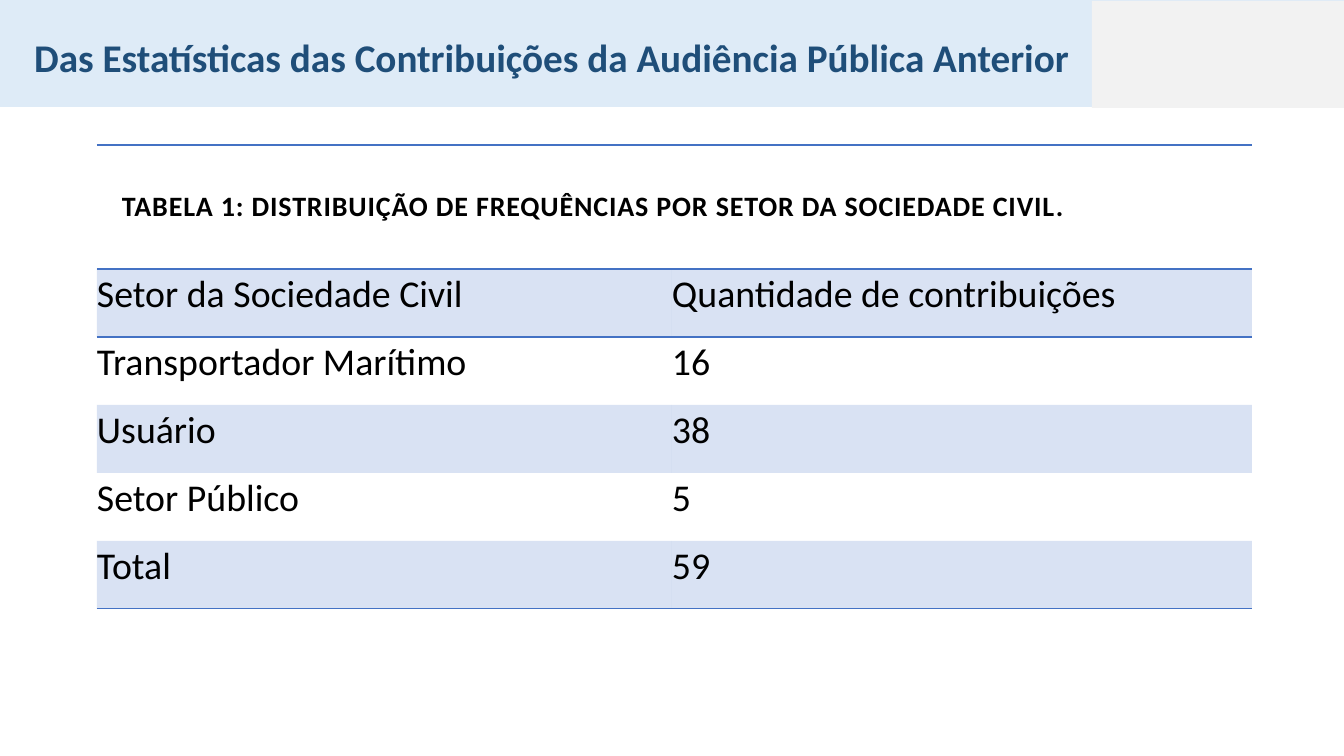
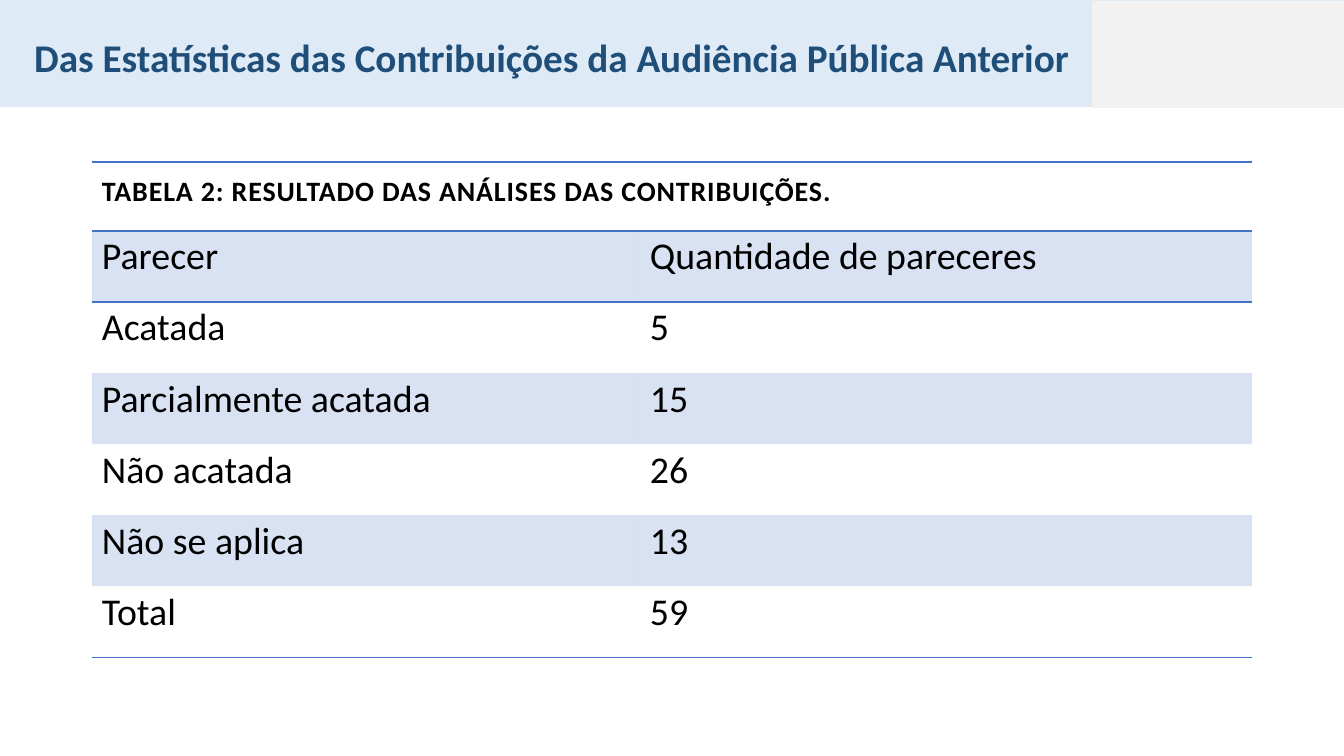
from dataclasses import dataclass

from lxml.etree import SubElement
from pptx import Presentation
from pptx.dml.color import RGBColor
from pptx.enum.shapes import MSO_SHAPE
from pptx.enum.text import MSO_ANCHOR, MSO_AUTO_SIZE, PP_ALIGN
from pptx.oxml import parse_xml
from pptx.oxml.ns import nsdecls, qn
from pptx.util import Emu, Pt

PX_PER_INCH = 100.8
FONT = "Calibri"
NO_TABLE_STYLE = "{2D5ABB26-0587-4C30-8999-92F81FD0307C}"
TITLE = "Das Estatísticas das Contribuições da Audiência Pública Anterior"
COLORS = {
    "band": "DEEBF7",
    "logo_area": "F2F2F2",
    "title": "1F4E79",
    "text": "000000",
    "accent": "4472C4",
}


@dataclass(frozen=True)
class Band:
    left: int
    top: int
    width: int
    height: int
    color: str


@dataclass(frozen=True)
class Insets:
    left: int
    top: int
    right: int
    bottom: int


@dataclass(frozen=True)
class StatTable:
    left: int
    top: int
    columns: tuple[int, int]
    caption: str
    caption_height: int
    caption_anchor: MSO_ANCHOR
    caption_insets: Insets
    row_height: int
    insets: Insets
    rows: tuple[tuple[str, str], ...]


BANDS = (
    Band(0, 0, 1344, 107, "band"),
    Band(1092, 1, 252, 107, "logo_area"),
)

STAT_TABLES = (
    StatTable(
        97, 145, (575, 580),
        "TABELA 1: DISTRIBUIÇÃO DE FREQUÊNCIAS POR SETOR DA SOCIEDADE CIVIL.",
        124, MSO_ANCHOR.MIDDLE, Insets(25, 25, 25, 25),
        68, Insets(0, 0, 0, 17),
        (
            ("Setor da Sociedade Civil", "Quantidade de contribuições"),
            ("Transportador Marítimo", "16"),
            ("Usuário", "38"),
            ("Setor Público", "5"),
            ("Total", "59"),
        ),
    ),
    StatTable(
        92, 162, (548, 612),
        "TABELA 2: RESULTADO DAS ANÁLISES DAS CONTRIBUIÇÕES.",
        69, MSO_ANCHOR.BOTTOM, Insets(10, 3, 0, 22),
        71, Insets(10, 3, 0, 22),
        (
            ("Parecer", "Quantidade de pareceres"),
            ("Acatada", "5"),
            ("Parcialmente acatada", "15"),
            ("Não acatada", "26"),
            ("Não se aplica", "13"),
            ("Total", "59"),
        ),
    ),
)


def px(length: int) -> Emu:
    return Emu(round(length * 914400 / PX_PER_INCH))


def rgb(name: str) -> RGBColor:
    return RGBColor.from_string(COLORS[name])


def add_run(paragraph, text: str, size: int, color: str, bold: bool, spacing: int = 0) -> None:
    run = paragraph.add_run()
    run.text = text
    run.font.name = FONT
    run.font.size = Pt(size)
    run.font.bold = bold
    run.font.color.rgb = rgb(color)
    if spacing:
        run._r.get_or_add_rPr().set("spc", str(spacing))


def move_bands_to_layout(slide, layout) -> None:
    for position, band in enumerate(BANDS, start=2):
        strip = slide.shapes.add_shape(
            MSO_SHAPE.RECTANGLE, px(band.left), px(band.top), px(band.width), px(band.height)
        )
        strip.shadow.inherit = False
        strip.fill.solid()
        strip.fill.fore_color.rgb = rgb(band.color)
        strip.line.fill.background()
        layout.shapes.element.insert(position, strip.element)


def add_title(slide) -> None:
    title = slide.shapes.title
    title.left, title.top, title.width, title.height = px(24), px(8), px(1159), px(103)
    frame = title.text_frame
    frame.word_wrap = True
    frame.auto_size = MSO_AUTO_SIZE.NONE
    frame.vertical_anchor = MSO_ANCHOR.MIDDLE
    paragraph = frame.paragraphs[0]
    paragraph.alignment = PP_ALIGN.LEFT
    paragraph.line_spacing = 0.9
    add_run(paragraph, TITLE, 28, "title", True)


def shade(cell) -> None:
    cell.fill.solid()
    cell.fill.fore_color.rgb = rgb("accent")
    tint = cell._tc.tcPr.find(qn("a:solidFill")).find(qn("a:srgbClr"))
    SubElement(tint, qn("a:alpha")).set("val", "20000")


def add_borders(cell, *edges: str) -> None:
    properties = cell._tc.get_or_add_tcPr()
    for position, edge in enumerate(edges):
        properties.insert(position, parse_xml(
            f'<a:{edge} {nsdecls("a")} w="12700"><a:solidFill>'
            f'<a:srgbClr val="{COLORS["accent"]}"/></a:solidFill></a:{edge}>'
        ))


def set_insets(cell, insets: Insets) -> None:
    cell.margin_left, cell.margin_top = px(insets.left), px(insets.top)
    cell.margin_right, cell.margin_bottom = px(insets.right), px(insets.bottom)


def add_stat_table(slide, stats: StatTable) -> None:
    row_count = len(stats.rows) + 1
    height = stats.caption_height + stats.row_height * len(stats.rows)
    frame = slide.shapes.add_table(
        row_count, len(stats.columns),
        px(stats.left), px(stats.top), px(sum(stats.columns)), px(height),
    )
    for style in frame.element.iter(qn("a:tableStyleId")):
        style.text = NO_TABLE_STYLE
    table = frame.table
    table.first_row = table.horz_banding = False
    for column, width in zip(table.columns, stats.columns):
        column.width = px(width)

    table.rows[0].height = px(stats.caption_height)
    caption = table.cell(0, 0)
    caption.merge(table.cell(0, len(stats.columns) - 1))
    caption.vertical_anchor = stats.caption_anchor
    set_insets(caption, stats.caption_insets)
    add_run(caption.text_frame.paragraphs[0], stats.caption, 20, "text", True, 60)
    for cell in table.rows[0].cells:
        cell.fill.background()
        add_borders(cell, "lnT", "lnB")

    for row_index, values in enumerate(stats.rows, start=1):
        table.rows[row_index].height = px(stats.row_height)
        for column_index, value in enumerate(values):
            cell = table.cell(row_index, column_index)
            cell.vertical_anchor = MSO_ANCHOR.MIDDLE
            set_insets(cell, stats.insets)
            add_run(cell.text_frame.paragraphs[0], value, 27, "text", False)
            if row_index % 2:
                shade(cell)
            else:
                cell.fill.background()
            if row_index == 1:
                add_borders(cell, "lnT")
            elif row_index == row_count - 1:
                add_borders(cell, "lnB")


def main() -> None:
    presentation = Presentation()
    presentation.slide_width, presentation.slide_height = px(1344), px(756)
    layout = presentation.slide_layouts.get_by_name("Title Only")
    slides = [presentation.slides.add_slide(layout) for _ in STAT_TABLES]
    move_bands_to_layout(slides[0], layout)
    for slide, stats in zip(slides, STAT_TABLES):
        add_title(slide)
        add_stat_table(slide, stats)
    presentation.save("out.pptx")


if __name__ == "__main__":
    main()
